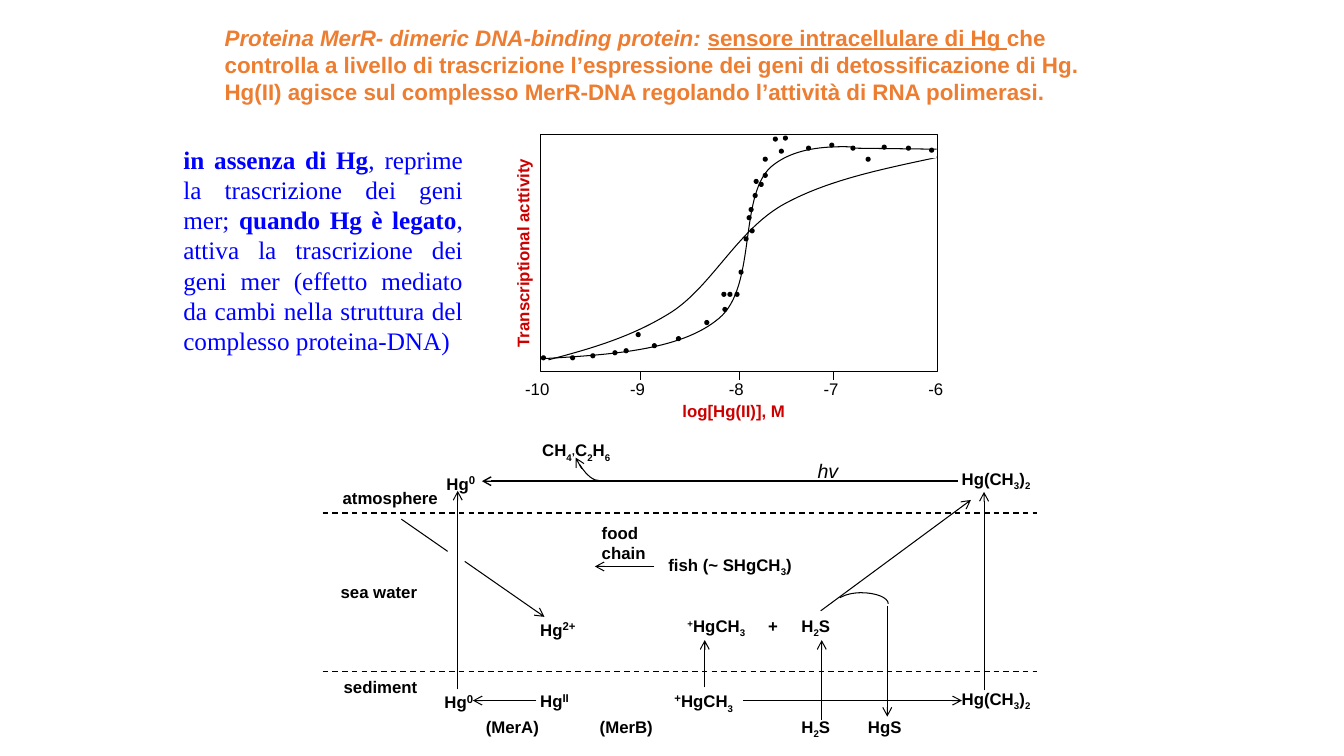
from lxml import etree
from pptx import Presentation
from pptx.dml.color import RGBColor
from pptx.enum.dml import MSO_LINE
from pptx.enum.shapes import MSO_CONNECTOR, MSO_SHAPE
from pptx.enum.text import MSO_AUTO_SIZE, PP_ALIGN
from pptx.oxml.ns import qn
from pptx.util import Inches, Pt

COLUMNS, ROWS = 1333, 750
CELL = Inches(0.01)
STRAIGHT = MSO_CONNECTOR.STRAIGHT
RECTANGLE, OVAL = MSO_SHAPE.RECTANGLE, MSO_SHAPE.OVAL
DASH = MSO_LINE.DASH
JUSTIFY, LEFT = PP_ALIGN.JUSTIFY, PP_ALIGN.LEFT
FIT = MSO_AUTO_SIZE.SHAPE_TO_FIT_TEXT
BLACK, WHITE, RED, ORANGE, BLUE = "000000", "FFFFFF", "CC0000", "ED7D31", "0000FF"
BOTTOM = 2


def colour(code):
    return RGBColor.from_string(code)


def sub(text, size=12):
    return text, {"base": -25000, "size": size}


def sup(text, size=14):
    return text, {"base": 30000, "size": size}


HG0 = ("Hg", sup("0"))
DIMETHYL = ("Hg(CH", sub("3"), ")", sub("2"))


class Region:
    def __init__(self, shapes, box):
        self.shapes = shapes
        self.left, self.top, self.width, self.height = box

    def point(self, x, y):
        return int((self.left + x) * CELL), int((self.top + y) * CELL)

    def text(self, box, spans, size=12, font="Arial", tint=BLACK, bold=True,
             italic=False, align=LEFT, tabs=()):
        x, y, width, height = box
        label = self.shapes.add_textbox(*self.point(x, y), width * CELL, height * CELL)
        frame = label.text_frame
        frame.word_wrap = True
        frame.auto_size = FIT
        para = frame.paragraphs[0]
        para.alignment = align
        if tabs:
            stops = etree.SubElement(para._p.get_or_add_pPr(), qn("a:tabLst"))
            for stop in tabs:
                etree.SubElement(stops, qn("a:tab"), pos=str(stop * CELL), algn="l")
        for span in spans:
            words, style = (span, {}) if isinstance(span, str) else span
            run = para.add_run()
            run.text = words
            run.font.name = font
            run.font.size = Pt(style.get("size", size))
            run.font.bold = style.get("bold", bold)
            run.font.italic = style.get("italic", italic)
            run.font.underline = style.get("underline", False)
            run.font.color.rgb = colour(tint)
            if "base" in style:
                run.font._element.set("baseline", str(style["base"]))
        return label

    def shape(self, kind, box, fill=None, line=None):
        x, y, width, height = box
        item = self.shapes.add_shape(kind, *self.point(x, y), width * CELL, height * CELL)
        finish(item, fill, line)
        return item

    def line(self, start, end, arrow=False, weight=0.75, dash=None):
        link = self.shapes.add_connector(STRAIGHT, *self.point(*start), *self.point(*end))
        link.line.color.rgb = colour(BLACK)
        link.line.width = Pt(weight)
        if dash:
            link.line.dash_style = dash
        if arrow:
            etree.SubElement(link.line._get_or_add_ln(), qn("a:tailEnd"), type="arrow")
        etree.SubElement(link._element.spPr, qn("a:effectLst"))
        return link

    def curve(self, start, *knots):
        builder = self.shapes.build_freeform(*self.point(*start))
        builder.add_line_segments([self.point(*knot) for knot in knots], close=False)
        item = builder.convert_to_shape()
        outline = next(item._element.iter(qn("a:path")))
        segments = outline.findall(qn("a:lnTo"))
        for first in range(0, len(segments), 3):
            bend = etree.SubElement(outline, qn("a:cubicBezTo"))
            for segment in segments[first:first + 3]:
                bend.append(segment[0])
                outline.remove(segment)
        finish(item, None, BLACK)


def finish(item, fill, line):
    item.shadow.inherit = False
    if fill:
        item.fill.solid()
        item.fill.fore_color.rgb = colour(fill)
    else:
        item.fill.background()
    if line:
        item.line.color.rgb = colour(line)
        item.line.width = Pt(0.75)
    else:
        item.line.fill.background()


def add_heading(page, box):
    region = Region(page.shapes, box)
    region.text((0, 0, region.width, region.height), (
        ("Proteina MerR- dimeric DNA-binding protein: ", {"italic": True}),
        ("sensore intracellulare di Hg ", {"underline": True}),
        "che controlla a livello di trascrizione l’espressione dei geni di "
        "detossificazione di Hg. Hg(II) agisce sul complesso MerR-DNA regolando "
        "l’attività di RNA polimerasi."), size=16, tint=ORANGE)


def add_explanation(page, box):
    region = Region(page.shapes, box)
    region.text((0, 0, region.width, region.height), (
        ("in assenza di Hg", {"bold": True}),
        ", reprime la trascrizione dei geni mer; ",
        ("quando Hg è legato", {"bold": True}),
        ", attiva la trascrizione dei geni mer (effetto mediato da cambi nella "
        "struttura del complesso proteina-DNA)"),
        size=18, font="Times New Roman", tint=BLUE, bold=False, align=JUSTIFY)


def add_activity_plot(page, box):
    region = Region(page.shapes.add_group_shape().shapes, box)
    width, height = region.width, region.height
    frame = region.shape(RECTANGLE, (0, 0, width, height), line=BLACK)
    for x in (99, width / 2, 291):
        tick = region.line((x, height), (x, height + 8))
        if x == width / 2:
            tick.begin_connect(frame, BOTTOM)
    for value, x in zip(range(-10, -5), (-25, 79, 177, 271, 375)):
        region.text((x, 238, 55, 30), (str(value),), bold=False)

    region.curve((8, 224), (50, 213), (92, 201), (131, 176),
                 (170, 150), (195, 97), (239, 71),
                 (283, 46), (338, 35), (width, 23))
    region.curve((width, 23), (331, 13), (268, 3), (232, 30),
                 (195, 56), (216, 151), (177, 183),
                 (139, 215), (69, 219), (0, 223))
    region.shape(RECTANGLE, (312, 4, 81, 20), fill=WHITE)
    region.line((308, 14), (393, 15))

    measurements = (
        (1, 220), (30, 220), (50, 218), (72, 215), (83, 213), (95, 197), (111, 208),
        (135, 201), (163, 185), (181, 172), (180, 157), (186, 157), (193, 157),
        (197, 135), (202, 102), (208, 94), (205, 81), (207, 73), (211, 59), (217, 48),
        (212, 45), (221, 39), (221, 23), (237, 15), (231, 3), (241, 2), (264, 12),
        (287, 9), (308, 12), (323, 23), (339, 11), (363, 12), (386, 14))
    for x, y in measurements:
        region.shape(OVAL, (x, y, 4, 4), fill=BLACK, line=BLACK)

    region.text((131, 260, 142, 30), ("log[Hg(II)], M",), tint=RED)
    axis = region.text((-140, 84, 245, 30), ("Transcriptional acttivity",), tint=RED)
    axis.rotation = 270


def add_mercury_cycle(page, box):
    region = Region(page.shapes.add_group_shape().shapes, box)
    for y in (80, 237):
        region.line((0, y), (region.width, y), weight=1, dash=DASH)
    region.line((630, 48.4), (158, 48.4), arrow=True, weight=1)
    region.line((78, 86), (124, 118))
    arrows = (
        ((134, 255), (134, 58)), ((656, 256), (656, 59)), ((212, 266), (149, 266)),
        ((417, 266), (634, 266)), ((379, 253), (379, 206)), ((495, 285), (495, 206)),
        ((560, 172), (560, 282)), ((257, 36), (251, 25)), ((494, 177), (643, 67)),
        ((141, 128), (220, 183)), ((329, 133), (270, 133)))
    for start, end in arrows:
        region.line(start, end, arrow=True)
    region.curve((255, 32), (259, 38), (263, 44), (270, 47),
                 (278, 49), (290, 48), (302, 47))
    region.shape(RECTANGLE, (274, 39, 31, 8), fill=WHITE)
    region.curve((561, 170), (561, 164), (549, 159), (534, 159),
                 (526, 159), (518, 161), (513, 164))

    labels = (
        (10, 50, 118, ("atmosphere",)), (8, 143, 102, ("sea water",)),
        (11, 237, 102, ("sediment",)),
        (113, 33, 63, HG0), (111, 250, 63, HG0),
        (206, 249, 63, ("Hg", sup("II"))), (206, 178, 63, ("Hg", sup("2+"))),
        (624, 31, 93, DIMETHYL), (624, 249, 93, DIMETHYL),
        (339, 249, 85, (sup("+"), "HgCH", sub("3"))),
        (208, 0, 93, ("CH", sub("4"), sub("’", 14), "C", sub("2"), "H", sub("6"))),
        (333, 116, 148, ("fish (~ SHgCH", sub("3"), ")")))
    for x, y, width, spans in labels:
        region.text((x, y, width, 30), spans)
    region.text((352, 177, 199, 30),
                (sup("+", 12), "HgCH", sub("3"), "\t+\tH", sub("2"), "S"), tabs=(80, 113))
    region.text((152, 277, 533, 30),
                ("(MerA)\t(MerB)\tH", sub("2"), "S\tHgS"), tabs=(113, 313, 379))
    region.text((267, 85, 87, 50), ("food chain",))
    region.text((481, 21, 55, 33), ("hv",), size=14, bold=False, italic=True)


def main():
    deck = Presentation()
    deck.slide_width, deck.slide_height = COLUMNS * CELL, ROWS * CELL
    page = deck.slides.add_slide(deck.slide_layouts[6])
    add_heading(page, (213, 19, 913, 91))
    add_activity_plot(page, (536, 133, 394, 236))
    add_mercury_cycle(page, (320, 429, 709, 307))
    add_explanation(page, (172, 138, 297, 222))
    deck.save("out.pptx")


if __name__ == "__main__":
    main()
